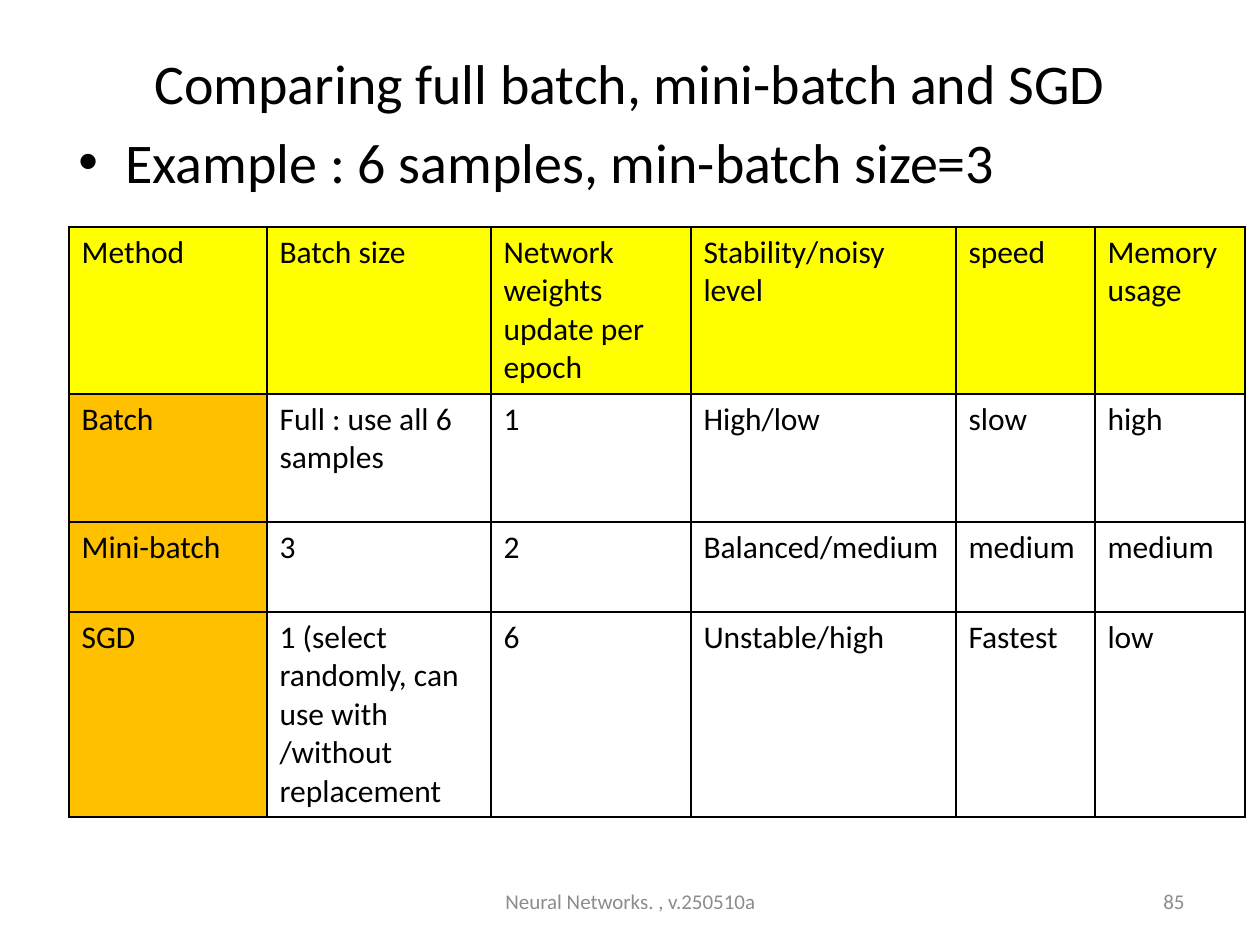
from lxml.etree import SubElement
from pptx import Presentation
from pptx.dml.color import RGBColor
from pptx.enum.text import MSO_ANCHOR, PP_ALIGN
from pptx.oxml.ns import qn
from pptx.util import Emu, Pt

# Content
TITLE = "Comparing full batch, mini-batch and SGD"
EXAMPLE = "Example : 6 samples, min-batch size=3"
FOOTER = "Neural Networks. , v.250510a"
PAGE_NUMBER = "85"
METHODS = [
    ["Method", "Batch size", "Network weights update per epoch",
     "Stability/noisy level", "speed", "Memory usage"],
    ["Batch", "Full : use all 6 samples", "1", "High/low", "slow", "high"],
    ["Mini-batch", "3", "2", "Balanced/medium", "medium", "medium"],
    ["SGD", "1 (select randomly, can use with /without replacement",
     "6", "Unstable/high", "Fastest", "low"],
]
COLUMN_WIDTHS = [198, 224, 200, 265, 139, 150]
ROW_HEIGHTS = [167, 128, 90, 205]

FONT = "Calibri"
BLACK = RGBColor(0x00, 0x00, 0x00)
GRAY = RGBColor(0x8C, 0x8C, 0x8C)
YELLOW = RGBColor(0xFF, 0xFF, 0x00)
ORANGE = RGBColor(0xFF, 0xC0, 0x00)


def px(length):
    return Emu(round(length * 914400 / 126))


def write(frame, text, size, color, align=PP_ALIGN.LEFT):
    frame.text = text
    frame.word_wrap = True
    para = frame.paragraphs[0]
    para.alignment = align
    font = para.runs[0].font
    font.name, font.size = FONT, Pt(size)
    font.color.rgb = color
    return para


def add_text(page, place, text, size, color, align, anchor):
    box = page.shapes.add_textbox(*map(px, place))
    box.text_frame.vertical_anchor = anchor
    return write(box.text_frame, text, size, color, align)


def add_bullet(para, indent):
    props = para._p.get_or_add_pPr()
    props.set("marL", str(px(indent)))
    props.set("indent", str(-px(indent)))
    SubElement(props, qn("a:buFont"), typeface="Arial")
    SubElement(props, qn("a:buChar"), char="•")


def add_borders(cell):
    props = cell._tc.get_or_add_tcPr()
    for position, side in enumerate(("lnL", "lnR", "lnT", "lnB")):
        line = SubElement(props, qn(f"a:{side}"), w=str(Pt(1)))
        fill = SubElement(line, qn("a:solidFill"))
        SubElement(fill, qn("a:srgbClr"), val=str(BLACK))
        props.insert(position, line)  # borders precede the fill


def fill_cell(cell, row, column):
    if row and column:
        cell.fill.background()
        return
    cell.fill.solid()
    cell.fill.fore_color.rgb = ORANGE if row else YELLOW


def add_methods_table(page):
    table = page.shapes.add_table(
        len(METHODS), len(COLUMN_WIDTHS), px(69), px(227),
        px(sum(COLUMN_WIDTHS)), px(sum(ROW_HEIGHTS))).table
    table.first_row = table.horz_banding = False
    for column, width in zip(table.columns, COLUMN_WIDTHS):
        column.width = px(width)
    for row, height in zip(table.rows, ROW_HEIGHTS):
        row.height = px(height)
    for r, texts in enumerate(METHODS):
        for c, text in enumerate(texts):
            cell = table.cell(r, c)
            write(cell.text_frame, text, 18, BLACK)
            fill_cell(cell, r, c)
            add_borders(cell)


def main():
    deck = Presentation()
    deck.slide_width, deck.slide_height = px(1260), px(945)
    page = deck.slides.add_slide(deck.slide_layouts[5])

    # Title
    title = page.shapes.title
    title.left, title.top, title.width, title.height = map(px, (63, 38, 1134, 88))
    title.text_frame.vertical_anchor = MSO_ANCHOR.MIDDLE
    write(title.text_frame, TITLE, 32, BLACK, PP_ALIGN.CENTER)

    # Example line
    example = add_text(page, (66, 121, 1134, 624), EXAMPLE, 32, BLACK,
                       PP_ALIGN.LEFT, MSO_ANCHOR.TOP)
    example.space_before = Pt(6.4)
    add_bullet(example, 47)

    # Footer and page number
    add_text(page, (431, 876, 399, 50), FOOTER, 12, GRAY,
             PP_ALIGN.CENTER, MSO_ANCHOR.MIDDLE)
    add_text(page, (903, 876, 294, 50), PAGE_NUMBER, 12, GRAY,
             PP_ALIGN.RIGHT, MSO_ANCHOR.MIDDLE)

    # Comparison table
    add_methods_table(page)
    deck.save("out.pptx")


if __name__ == "__main__":
    main()
